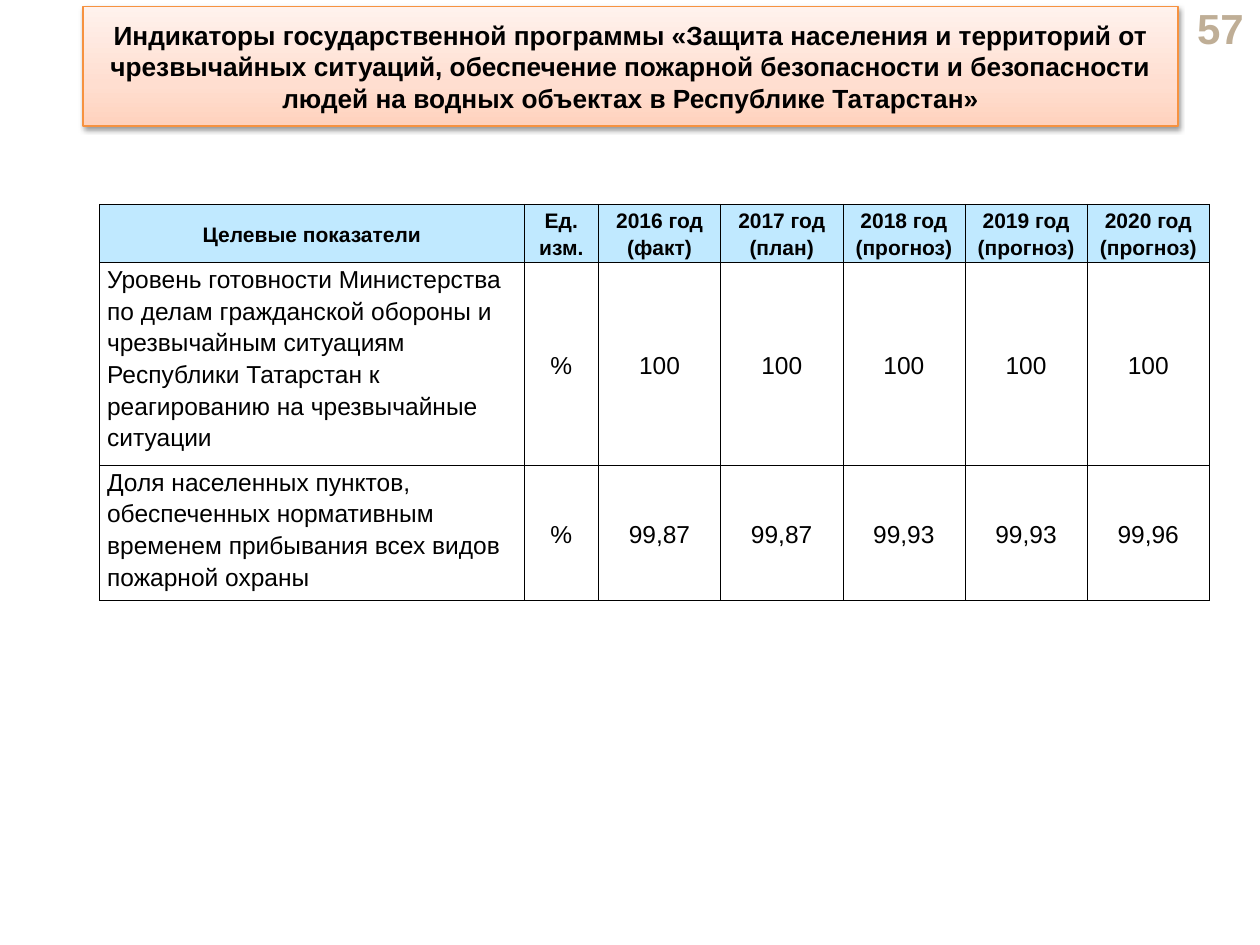
from dataclasses import dataclass

from pptx import Presentation
from pptx.dml.color import RGBColor
from pptx.enum.text import MSO_ANCHOR, MSO_AUTO_SIZE, PP_ALIGN
from pptx.oxml import parse_xml
from pptx.oxml.ns import nsdecls
from pptx.util import Inches, Pt

LEFT, CENTER, RIGHT = PP_ALIGN.LEFT, PP_ALIGN.CENTER, PP_ALIGN.RIGHT
TOP, MIDDLE = MSO_ANCHOR.TOP, MSO_ANCHOR.MIDDLE
NO_AUTOFIT = MSO_AUTO_SIZE.NONE


@dataclass(frozen=True)
class Theme:
    font: str = "Arial"
    ink: str = "000000"
    page_number: str = "BFAE96"
    header_fill: str = "C0E9FF"
    banner_line: str = "F69240"
    banner_stops: tuple = ((0, "FFD2BD"), (35, "FFDED0"), (100, "FFF2ED"))
    number_size: int = 24
    title_size: int = 15
    header_size: int = 12
    body_size: int = 14
    line_spacing: float = 1.15


class Page:
    """Holds the theme and the current slide."""

    def __init__(self, deck, theme):
        self.theme = theme
        self.slide = deck.slides.add_slide(deck.slide_layouts[5])

    def set_text(self, para, text, size, color, bold=False, align=LEFT):
        para.text = text
        para.alignment = align
        for span in para.runs:
            span.font.name = self.theme.font
            span.font.size = Pt(size)
            span.font.bold = bold
            span.font.color.rgb = RGBColor.from_string(color)

    def banner_title(self, text, left, top, width, height):
        """Turn the title placeholder into a rounded gradient banner."""
        title = self.slide.shapes.title
        title.left, title.top = Inches(left), Inches(top)
        title.width, title.height = Inches(width), Inches(height)
        properties = title._element.spPr
        names = nsdecls("a")
        stops = "".join(
            f'<a:gs pos="{position * 1000}"><a:srgbClr val="{color}"/></a:gs>'
            for position, color in self.theme.banner_stops)
        properties.append(parse_xml(
            f'<a:prstGeom {names} prst="roundRect"><a:avLst/></a:prstGeom>'))
        properties.append(parse_xml(
            f'<a:gradFill {names} rotWithShape="1"><a:gsLst>{stops}</a:gsLst>'
            '<a:lin ang="16200000" scaled="1"/></a:gradFill>'))
        title.line.color.rgb = RGBColor.from_string(self.theme.banner_line)
        title.line.width = Pt(0.75)
        properties.append(parse_xml(
            f'<a:effectLst {names}><a:outerShdw blurRad="{Pt(3.1)}" '
            f'dist="{Pt(1.6)}" dir="5400000" rotWithShape="0">'
            f'<a:srgbClr val="{self.theme.ink}"><a:alpha val="38000"/>'
            '</a:srgbClr></a:outerShdw></a:effectLst>'))
        frame = title.text_frame
        frame.word_wrap = True
        frame.auto_size = NO_AUTOFIT
        frame.vertical_anchor = MIDDLE
        self.set_text(frame.paragraphs[0], text, self.theme.title_size,
                      self.theme.ink, True, CENTER)

    def page_number(self, text, left, top, width, height):
        box = self.slide.shapes.add_textbox(
            Inches(left), Inches(top), Inches(width), Inches(height))
        frame = box.text_frame
        frame.word_wrap = True
        frame.vertical_anchor = MIDDLE
        self.set_text(frame.paragraphs[0], text, self.theme.number_size,
                      self.theme.page_number, True, RIGHT)

    def table(self, rows, left, top, widths, heights):
        table = self.slide.shapes.add_table(
            len(rows), len(widths), Inches(left), Inches(top),
            Inches(sum(widths)), Inches(sum(heights))).table
        for column, width in zip(table.columns, widths):
            column.width = Inches(width)
        for row, height in zip(table.rows, heights):
            row.height = Inches(height)
        for row_index, values in enumerate(rows):
            for column_index, value in enumerate(values):
                self.cell(table.cell(row_index, column_index), value,
                          is_header=row_index == 0,
                          is_label=row_index > 0 and column_index == 0)

    def cell(self, cell, text, is_header, is_label):
        theme = self.theme
        cell.margin_left = cell.margin_right = Inches(0.06)
        cell.margin_top = cell.margin_bottom = 0
        cell.vertical_anchor = TOP if is_label else MIDDLE
        # Borders come before the fill in the cell properties
        for side in ("lnL", "lnR", "lnT", "lnB"):
            cell._tc.get_or_add_tcPr().append(parse_xml(
                f'<a:{side} {nsdecls("a")} w="{Pt(0.25)}"><a:solidFill>'
                f'<a:srgbClr val="{theme.ink}"/></a:solidFill></a:{side}>'))
        if is_header:
            cell.fill.solid()
            cell.fill.fore_color.rgb = RGBColor.from_string(theme.header_fill)
        else:
            cell.fill.background()
        para = cell.text_frame.paragraphs[0]
        para.line_spacing = theme.line_spacing
        self.set_text(para, text,
                      theme.header_size if is_header else theme.body_size,
                      theme.ink, is_header, LEFT if is_label else CENTER)


def main():
    deck = Presentation()
    deck.slide_width, deck.slide_height = Inches(10), Inches(7.5)
    page = Page(deck, Theme())

    # Heading and page number
    page.banner_title(
        "Индикаторы государственной программы «Защита населения и территорий "
        "от чрезвычайных ситуаций, обеспечение пожарной безопасности и "
        "безопасности людей на водных объектах в Республике Татарстан»",
        0.66, 0.05, 8.69, 0.95)
    page.page_number("57", 9.11, 0.05, 0.86, 0.34)

    # Target indicators by year
    years = ["2016 год (факт)", "2017 год (план)"]
    years += [f"{year} год (прогноз)" for year in (2018, 2019, 2020)]
    rows = [
        ["Целевые показатели", "Ед.\nизм.", *years],
        ["Уровень готовности Министерства по делам гражданской обороны и "
         "чрезвычайным ситуациям Республики Татарстан к реагированию на "
         "чрезвычайные ситуации", "%", *["100"] * len(years)],
        ["Доля населенных пунктов, обеспеченных нормативным временем "
         "прибывания всех видов пожарной охраны", "%",
         "99,87", "99,87", "99,93", "99,93", "99,96"],
    ]
    page.table(rows, 0.79, 1.62, [3.37, 0.59] + [0.97] * len(years),
               [0.46, 1.61, 1.07])

    deck.save("out.pptx")


if __name__ == "__main__":
    main()
